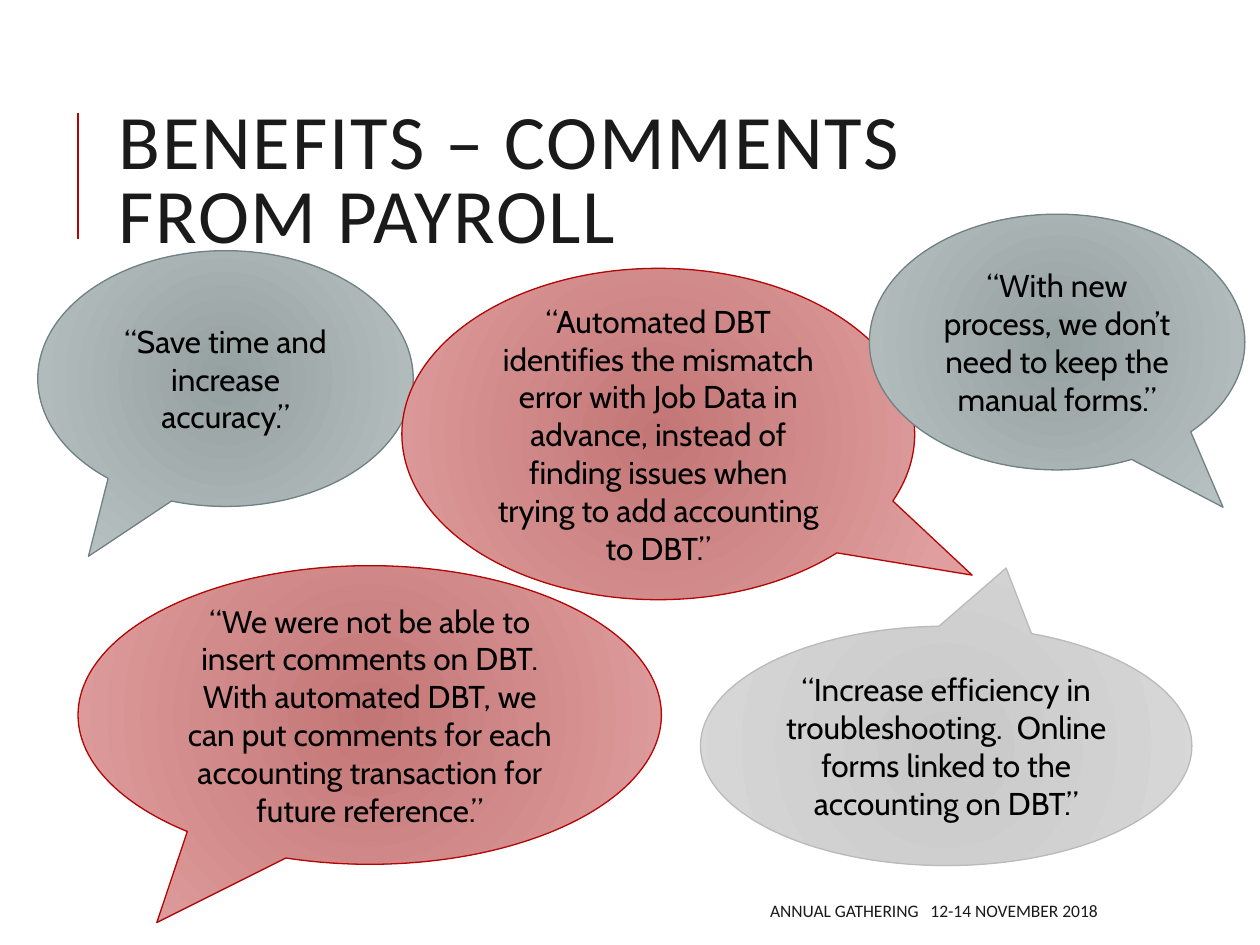
from lxml.etree import SubElement
from pptx import Presentation
from pptx.dml.color import RGBColor
from pptx.enum.shapes import MSO_CONNECTOR as Connector, MSO_SHAPE as Shape
from pptx.enum.text import MSO_ANCHOR as Anchor, MSO_AUTO_SIZE as AutoSize, PP_ALIGN as Align
from pptx.oxml.ns import qn
from pptx.util import Inches, Pt

COLUMNS, ROWS = 100, 75
WIDTH, HEIGHT = Inches(10), Inches(7.5)
TITLE_ONLY = 5

RED = RGBColor(0xB4, 0x04, 0x04)
ROSE = RGBColor(0xC3, 0x76, 0x76)
PINK = RGBColor(0xE0, 0x9E, 0x9E)
SLATE = RGBColor(0x6F, 0x81, 0x83)
STEEL = RGBColor(0x95, 0xA0, 0xA1)
MIST = RGBColor(0xB8, 0xC1, 0xC2)
GRAY = RGBColor(0xBA, 0xBA, 0xBA)
SILVER = RGBColor(0xC8, 0xC8, 0xC8)
PALE = RGBColor(0xD8, 0xD8, 0xD8)
INK = RGBColor(0x1A, 0x1A, 0x1A)
BLACK = RGBColor(0, 0, 0)

RED_BUBBLE = (ROSE, PINK, RED)
SLATE_BUBBLE = (STEEL, MIST, SLATE)
GRAY_BUBBLE = (SILVER, PALE, GRAY)

TITLE_FONT = {"name": "Calibri", "size": Pt(44), "color": INK}
FOOTER_FONT = {"name": "Calibri", "size": Pt(10), "color": INK}
QUOTE_FONT = {"name": "Cabin", "size": Pt(18), "color": BLACK}

COMMENTS = [
    ("“Save time and increase accuracy.”",
     (3, 19.9, 29.8, 20.3), (-0.365, 0.695), SLATE_BUBBLE),
    ("“Automated DBT identifies the mismatch error with Job Data in advance, "
     "instead of finding issues when trying to add accounting to DBT.”",
     (31.9, 21.3, 40.7, 26.3), (0.612, 0.426), RED_BUBBLE),
    ("“Increase efficiency in troubleshooting.  Online forms linked to the "
     "accounting on DBT.”",
     (55.6, 49.7, 39, 19), (0.122, -0.743), GRAY_BUBBLE),
    ("“We were not be able to insert comments on DBT. With automated DBT, we "
     "can put comments for each accounting transaction for future reference.”",
     (6.2, 44.9, 46.3, 23.7), (-0.365, 0.695), RED_BUBBLE),
    ("“With new process, we don’t need to keep the manual forms.”",
     (69, 17, 29.8, 20.3), (0.442, 0.646), SLATE_BUBBLE),
]


def column(count):
    return round(WIDTH * count / COLUMNS)


def row(count):
    return round(HEIGHT * count / ROWS)


def place(area):
    left, top, width, height = area
    return column(left), row(top), column(width), row(height)


def apply(target, values):
    for name, value in values.items():
        setattr(target, name, value)


def write(shape, text, font, **paragraph_format):
    apply(shape.text_frame, {"word_wrap": True, "auto_size": AutoSize.NONE,
                             "vertical_anchor": Anchor.MIDDLE})
    para = shape.text_frame.paragraphs[0]
    apply(para, paragraph_format)
    span = para.add_run()
    span.text = text
    apply(span.font, {"name": font["name"], "size": font["size"]})
    span.font.color.rgb = font["color"]
    return span


def add_rule(page, x, top, bottom):
    rule = page.shapes.add_connector(
        Connector.STRAIGHT, column(x), row(bottom), column(x), row(top))
    rule.line.color.rgb = RED
    rule.line.width = Pt(1.5)
    SubElement(rule._element.spPr, qn("a:effectLst"))


def add_title(page, text, area):
    title = page.shapes.title
    apply(title, dict(zip(("left", "top", "width", "height"), place(area))))
    span = write(title, text, TITLE_FONT, alignment=Align.LEFT, line_spacing=0.8)
    span.font._element.set("spc", "100")


def add_footer(page, text, area):
    box = page.shapes.add_textbox(*place(area))
    write(box, text, FOOTER_FONT, alignment=Align.RIGHT)


def fill_radially(shape, inner, outer):
    shape.fill.gradient()
    for stop, color, position in zip(shape.fill.gradient_stops, (inner, outer), (0, 1)):
        stop.color.rgb = color
        stop.position = position
    gradient = shape._element.spPr.find(qn("a:gradFill"))
    gradient.remove(gradient.find(qn("a:lin")))
    circle = SubElement(gradient, qn("a:path"), {"path": "circle"})
    SubElement(circle, qn("a:fillToRect"), dict.fromkeys("ltrb", "100000"))


def add_comment(page, text, area, tip, palette):
    inner, outer, edge = palette
    bubble = page.shapes.add_shape(Shape.OVAL_CALLOUT, *place(area))
    bubble.shadow.inherit = False
    for index, offset in enumerate(tip):
        bubble.adjustments[index] = offset
    fill_radially(bubble, inner, outer)
    bubble.line.color.rgb = edge
    bubble.line.width = Pt(0.75)
    write(bubble, text, QUOTE_FONT, alignment=Align.CENTER)


def main():
    deck = Presentation()
    apply(deck, {"slide_width": WIDTH, "slide_height": HEIGHT})
    page = deck.slides.add_slide(deck.slide_layouts[TITLE_ONLY])
    add_rule(page, 6.2, 9, 19)
    add_title(page, "BENEFITS – COMMENTS FROM PAYROLL", (8.4, 6.4, 79.7, 16.4))
    add_footer(page, "ANNUAL GATHERING   12-14 NOVEMBER 2018", (39.7, 70.8, 48.4, 3))
    for comment in COMMENTS:
        add_comment(page, *comment)
    deck.save("out.pptx")


if __name__ == "__main__":
    main()
